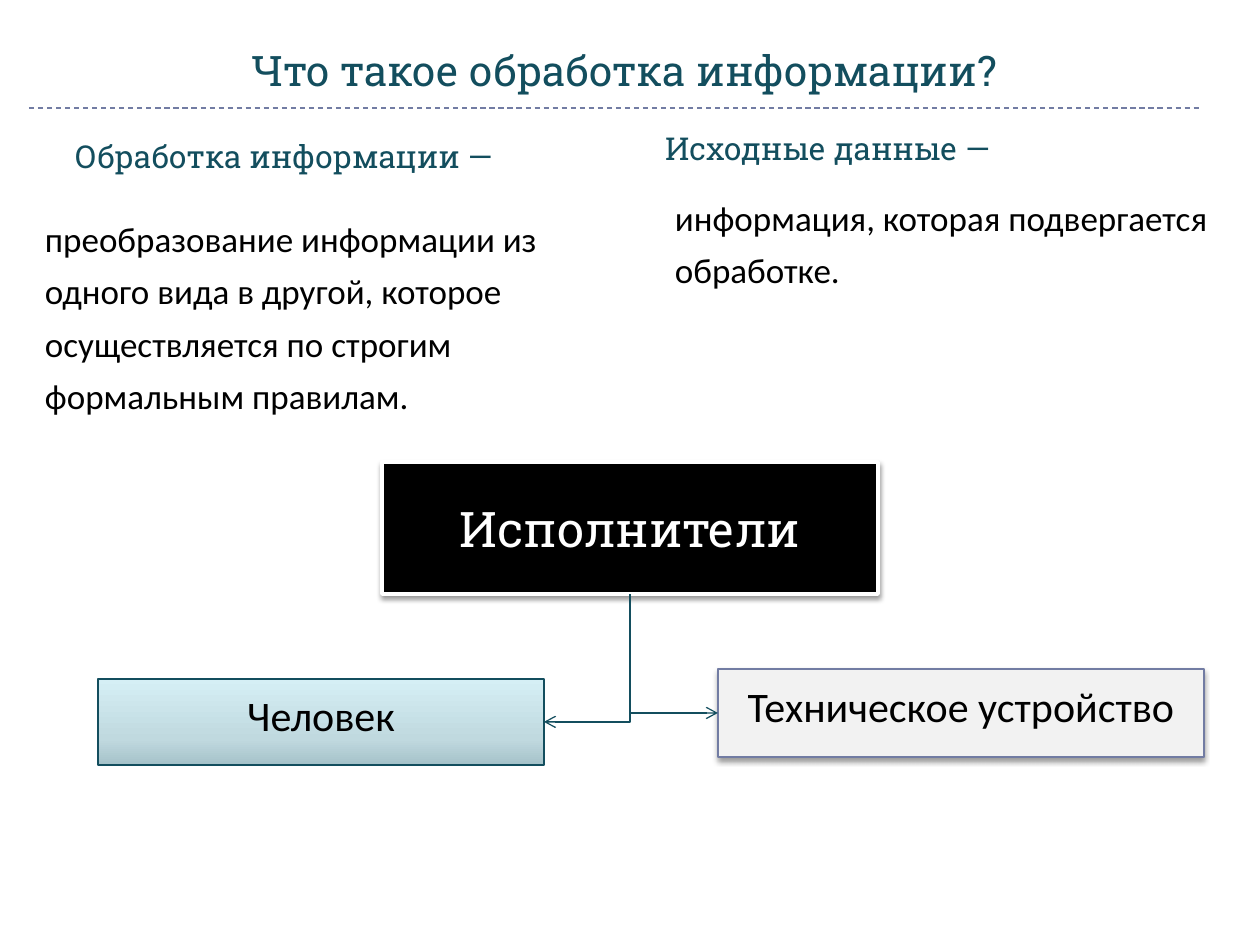
from lxml.etree import SubElement as Sub
from pptx import Presentation
from pptx.dml.color import RGBColor
from pptx.enum.dml import MSO_LINE as Dash
from pptx.enum.shapes import MSO_CONNECTOR as Link, MSO_SHAPE as Shape
from pptx.enum.text import MSO_ANCHOR as Anchor, MSO_AUTO_SIZE as Fit, PP_ALIGN as Align
from pptx.oxml.ns import qn
from pptx.util import Pt

SCALE = 914400 / 126
TEAL, SLATE, BLACK, WHITE, PALE = "134E5E", "727CA3", "000000", "FFFFFF", "F2F2F2"
FADE = [(0, "A5C2C9"), (30, "C0D9DF"), (100, "D5EFF5")]
SERIF, SANS = "Roboto Slab", "Calibri"


def px(*nums):
    """Turn px into EMU."""
    return [round(n * SCALE) for n in nums]


def rgb(code):
    return RGBColor.from_string(code)


class Deck:
    """Holds the style and the current slide."""

    heads = dict(name=SERIF, size=Pt(18), color=TEAL)
    title = dict(heads, size=Pt(24))
    body = dict(name=SANS, size=Pt(20), color=BLACK)
    label = dict(body, size=Pt(24))
    root = dict(name=SERIF, size=Pt(28), color=WHITE)

    def __init__(self, wide, high):
        self.show = Presentation()
        self.show.slide_width, self.show.slide_height = px(wide, high)
        self.slide = self.show.slides.add_slide(self.show.slide_layouts[6])
        self.shapes = self.slide.shapes

    def letter(self, shape, lines, font, pads, frame, para):
        """Fill a shape with text; pads are the side and top insets."""
        text = shape.text_frame
        side, top = px(*pads)
        frame = dict(frame, word_wrap=True, margin_left=side, margin_right=side,
                     margin_top=top, margin_bottom=top)
        for key, val in frame.items():
            setattr(text, key, val)
        for i, line in enumerate(lines):
            par = text.add_paragraph() if i else text.paragraphs[0]
            for key, val in para.items():
                setattr(par, key, val)
            run = par.add_run()
            run.text = line
            for key, val in font.items():
                if key == "color":
                    run.font.color.rgb = rgb(val)
                else:
                    setattr(run.font, key, val)

    def text(self, area, lines, font, pads=(6, 0), **para):
        box = self.shapes.add_textbox(*px(*area))
        self.letter(box, lines, font, pads, dict(auto_size=Fit.SHAPE_TO_FIT_TEXT), para)

    def stroke(self, line, color, width):
        line.color.rgb = rgb(color)
        line.width = Pt(width)

    def blend(self, fill, node, stops):
        """Give a gradient that runs upwards."""
        fill.gradient()
        fill.gradient_angle = 90
        group = node.find(".//" + qn("a:gsLst"))
        for old in list(group):
            group.remove(old)
        for spot, color in stops:
            stop = Sub(group, qn("a:gs"), pos=str(spot * 1000))
            Sub(stop, qn("a:srgbClr"), val=color)

    def shade(self, node):
        """Add a soft shadow below."""
        drop = Sub(node.find(qn("a:effectLst")), qn("a:outerShdw"),
                   blurRad=str(Pt(3)), dist=str(Pt(2)), dir="5400000",
                   algn="ctr", rotWithShape="0")
        tint = Sub(drop, qn("a:srgbClr"), val=BLACK)
        Sub(tint, qn("a:alpha"), val="40000")

    def block(self, kind, area, line, font, fill, edge, shadow=True, **para):
        box = self.shapes.add_shape(kind, *px(*area))
        node = box.element.spPr
        if isinstance(fill, str):
            box.fill.solid()
            box.fill.fore_color.rgb = rgb(fill)
        else:
            self.blend(box.fill, node, fill)
        self.stroke(box.line, *edge)
        box.shadow.inherit = False
        if shadow:
            self.shade(node)
        self.letter(box, [line], font, (25, 25),
                    dict(vertical_anchor=Anchor.MIDDLE), dict(para, alignment=Align.CENTER))
        return box

    def line(self, kind, ends, color):
        link = self.shapes.add_connector(kind, *px(*ends))
        self.stroke(link.line, color, 0.75)
        Sub(link.element.spPr, qn("a:effectLst"))
        return link

    def rule(self, *ends):
        self.line(Link.STRAIGHT, ends, SLATE).line.dash_style = Dash.DASH

    def branch(self, child, side, parent):
        """Join the side of a child to the bottom of its parent, arrow at the child."""
        link = self.line(Link.ELBOW, (0, 0, 0, 0), TEAL)
        link.begin_connect(child, side)
        link.end_connect(parent, 2)
        node = link.element.spPr
        node.find(qn("a:prstGeom")).set("prst", "bentConnector2")
        Sub(node.find(qn("a:ln")), qn("a:headEnd"), type="arrow")


def main():
    deck = Deck(1260, 945)
    deck.text((59, 39, 1131, 63), ["Что такое обработка информации?"], deck.title,
              (13, 6), alignment=Align.CENTER)
    deck.text((39, 207, 542, 208),
              ["преобразование информации из одного вида в другой, "
               "которое осуществляется по строгим формальным правилам."],
              deck.body, line_spacing=1.25)
    deck.text((69, 137, 462, 38), ["Обработка информации —"], deck.heads)

    root = deck.block(Shape.FLOWCHART_PROCESS, (382, 462, 496, 132), "Исполнители",
                      deck.root, BLACK, (WHITE, 2))
    device = deck.block(Shape.RECTANGLE, (718, 669, 486, 88), "Техническое устройство",
                        deck.label, PALE, (SLATE, 0.75), line_spacing=Pt(20))
    human = deck.block(Shape.RECTANGLE, (98, 679, 446, 86), "Человек",
                       deck.label, FADE, (TEAL, 1), False, line_spacing=Pt(20))
    for child, side in ((device, 1), (human, 3)):
        deck.branch(child, side, root)

    deck.text((669, 186, 552, 106), ["информация, которая подвергается", "обработке."],
              deck.body, line_spacing=1.25)
    deck.text((659, 129, 462, 38), ["Исходные данные —"], deck.heads)
    deck.rule(29, 108, 1201, 108)
    deck.show.save("out.pptx")


if __name__ == "__main__":
    main()
